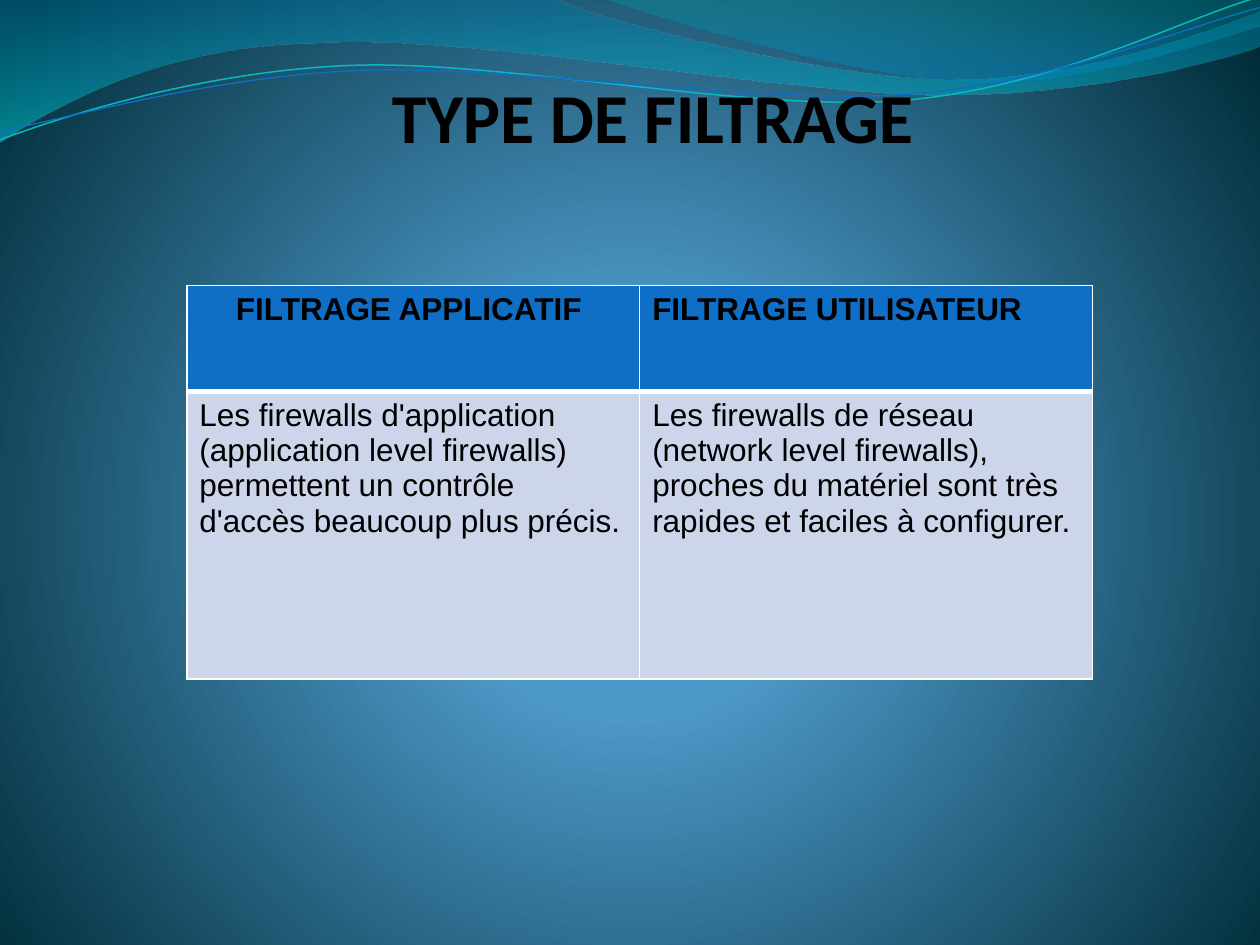
from dataclasses import dataclass
from math import cos, radians, sin
from lxml.etree import SubElement as Sub
from pptx import Presentation
from pptx.dml.color import RGBColor as Rgb
from pptx.enum.text import MSO_ANCHOR as Anchor, PP_ALIGN as Align
from pptx.oxml import parse_xml
from pptx.oxml.ns import nsdecls, qn
from pptx.util import Inches, Pt


@dataclass(frozen=True)
class Theme:
    """Hold the colours, fonts, type sizes and line widths of the slide."""
    ink: str = "000000"
    edge: str = "FFFFFF"
    head: str = "0F6FC6"
    body: str = "CCD5EA"
    teal: str = "0AB8BF"
    title: str = "Calibri"
    text: str = "Arial"
    big: int = 40
    small: int = 18
    thin: int = 1
    thick: int = 3
    back: tuple = ((0, "4AA0D6", 100), (25, "4C98C7", 100), (100, "002C38", 100))
    wave: tuple = ((0, "0074A1", 45), (100, "00C6CF", 55))
    crest: tuple = ((0, "00A1A9", 30), (80, "008BBF", 45))


LOOK = Theme()
COLS, ROWS = 100, 75
UNIT = Inches(0.1)
TILT = 2.7
DOWN = '<a:lin ang="5400000" scaled="1"/>'
GLOW = ('<a:path path="circle"><a:fillToRect l="10000" t="110000" '
        'r="10000" b="100000"/></a:path>')

WAVE = [(0, -0.1), (44, -0.1), (47.6, 1.7, 66.4, 6.3, 75.8, 6.3),
        (85.3, 6.3, 95.8, 2.6, 100, 0.9), (100.1, 3.6),
        (98.3, 4.4, 87, 7.6, 74.6, 7.5), (62.2, 7.5, 38.2, 2.8, 25.7, 3.4),
        (12.9, 3.5, 4.6, 8.3, -0.1, 11.3), (0, -0.1)]
CREST = [(47.9, -0.1), (50.9, 1.1, 68.2, 6.2, 76.9, 6.5),
         (85.6, 6.9, 96.1, 3.2, 100, 2.1), (100, 0), (47.9, -0.1)]
UPPER = [(0, 11.1), (4.8, 9.3, 15.8, 5.7, 27.7, 5.2),
         (39.5, 4.7, 59.3, 8.9, 71.3, 8), (83.3, 7.1, 93.8, 1.5, 99.8, -0.2)]
LOWER = [(0, 10.4), (4.7, 9.6, 16.4, 6.1, 28.3, 5.6),
         (40.3, 5.1, 59.7, 8.3, 71.7, 7.5), (83.6, 6.7, 94.1, 2.1, 100, 0.6)]

HEADS = ["FILTRAGE APPLICATIF ", "FILTRAGE UTILISATEUR"]
TEXTS = ["Les firewalls d'application (application level firewalls) "
         "permettent un contrôle d'accès beaucoup plus précis.",
         "Les firewalls de réseau (network level firewalls), "
         "proches du matériel sont très rapides et faciles à configurer."]


def grid(*cells):
    """Turn grid counts into slide lengths."""
    return [round(cell * UNIT) for cell in cells]


def assign(item, **values):
    """Set each named format value on an item."""
    for name, value in values.items():
        setattr(item, name, value)


def blend(fill, host, stops, mode):
    """Give the fill held by a host element a gradient."""
    fill.solid()
    marks = "".join(
        f'<a:gs pos="{spot * 1000}"><a:srgbClr val="{hue}">'
        f'<a:alpha val="{share * 1000}"/></a:srgbClr></a:gs>'
        for spot, hue, share in stops)
    grad = parse_xml(f'<a:gradFill {nsdecls("a")} rotWithShape="1">'
                     f'<a:gsLst>{marks}</a:gsLst>{mode}</a:gradFill>')
    host.replace(host.find(qn("a:solidFill")), grad)


def pairs(step):
    """Split a step of a route into its points."""
    return list(zip(step[::2], step[1::2]))


def level(route, mid):
    """Turn a route about a middle point to undo its tilt."""
    c, s = cos(radians(TILT)), sin(radians(TILT))
    result = []
    for step in route:
        gaps = [(x - mid[0], y - mid[1]) for x, y in pairs(step)]
        result.append(sum(((mid[0] + x * c - y * s, mid[1] + x * s + y * c)
                           for x, y in gaps), ()))
    return result


def outline(shapes, route, close):
    """Draw a route of lines and cubic curves without a shadow."""
    dots = [grid(*step[-2:]) for step in route]
    pen = shapes.build_freeform(*dots[0])
    pen.add_line_segments(dots[1:], close=close)
    shape = pen.convert_to_shape()
    shape.shadow.inherit = False
    left, top = (min(axis) for axis in zip(*dots))
    lines = list(shape.element.iter(qn("a:lnTo")))
    for line, step in zip(lines, route[1:]):
        if len(step) == 6:
            bend = line.makeelement(qn("a:cubicBezTo"))
            for dot in pairs(step):
                x, y = grid(*dot)
                Sub(bend, qn("a:pt"), x=str(x - left), y=str(y - top))
            line.getparent().replace(line, bend)
    return shape


def add_wave(shapes, route, stops):
    """Add a filled wave without an edge."""
    shape = outline(shapes, route, True)
    blend(shape.fill, shape.element.spPr, stops, DOWN)
    shape.line.fill.background()


def add_curve(shapes, route, mid, hue, width):
    """Add an open, tilted curve."""
    shape = outline(shapes, level(route, mid), False)
    shape.rotation = 360 - TILT
    shape.fill.background()
    shape.line.color.rgb = Rgb.from_string(hue)
    shape.line.width = Pt(width)


def write(para, text, align, **values):
    """Write one run in the ink colour."""
    para.alignment = align
    run = para.add_run()
    run.text = text
    assign(run.font, **values)
    run.font.color.rgb = Rgb.from_string(LOOK.ink)


def add_title(shapes, text):
    """Add the heading of the slide."""
    frame = shapes.add_textbox(*grid(17.2, 3.9, 69.4, 8.6)).text_frame
    assign(frame, word_wrap=True, vertical_anchor=Anchor.BOTTOM, margin_left=0,
           margin_top=0, margin_right=Inches(0.02), margin_bottom=0)
    write(frame.paragraphs[0], text, Align.CENTER,
          name=LOOK.title, size=Pt(LOOK.big), bold=True)


def border(cell, **widths):
    """Draw the sides of a table cell."""
    props = cell._tc.get_or_add_tcPr()
    for spot, side in enumerate("LRTB"):
        width = Pt(widths.get(side, LOOK.thin))
        line = props.makeelement(qn(f"a:ln{side}"), {"w": str(width)})
        Sub(Sub(line, qn("a:solidFill")), qn("a:srgbClr"), val=LOOK.edge)
        props.insert(spot, line)


def add_table(shapes):
    """Add the table that compares both kinds of filter."""
    table = shapes.add_table(2, 2, *grid(14.83, 22.66, 71.88, 31.25)).table
    for row, tall in zip(table.rows, grid(8.4, 22.85)):
        row.height = tall
    rows = [(HEADS, LOOK.head, True, {"B": LOOK.thick}),
            (TEXTS, LOOK.body, False, {"T": LOOK.thick})]
    for r, (texts, hue, bold, sides) in enumerate(rows):
        for c, text in enumerate(texts):
            cell = table.cell(r, c)
            cell.fill.solid()
            cell.fill.fore_color.rgb = Rgb.from_string(hue)
            border(cell, **sides)
            align = Align.CENTER if r == c == 0 else Align.LEFT
            write(cell.text_frame.paragraphs[0], text, align,
                  name=LOOK.text, size=Pt(LOOK.small), bold=bold)


def main():
    """Build and save the slide."""
    deck = Presentation()
    assign(deck, slide_width=COLS * UNIT, slide_height=ROWS * UNIT)
    slide = deck.slides.add_slide(deck.slide_layouts[6])
    fill = slide.background.fill
    fill.solid()
    blend(fill, slide.element.find(".//" + qn("p:bgPr")), LOOK.back, GLOW)
    shapes = slide.shapes
    add_wave(shapes, WAVE, LOOK.wave)
    add_wave(shapes, CREST, LOOK.crest)
    lines = shapes.add_group_shape().shapes
    add_curve(lines, UPPER, (49.9, 5.75), LOOK.teal, 0.85)
    add_curve(lines, LOWER, (49.95, 5.9), LOOK.head, 0.75)
    add_title(shapes, "TYPE DE FILTRAGE")
    add_table(shapes)
    deck.save("out.pptx")


if __name__ == "__main__":
    main()
